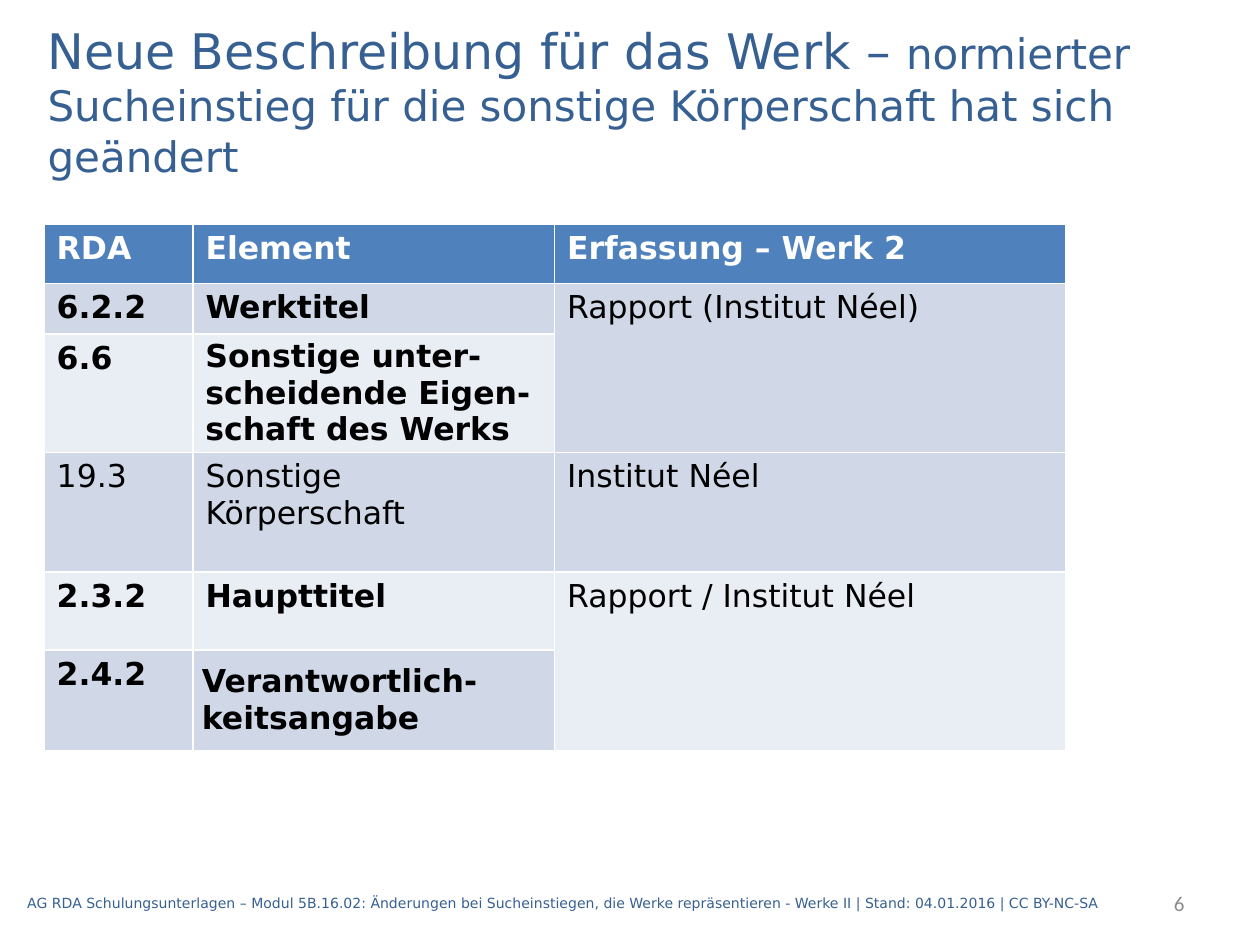
from pptx import Presentation
from pptx.dml.color import RGBColor
from pptx.enum.text import MSO_ANCHOR as Anchor, PP_ALIGN as Align
from pptx.util import Cm, Pt

SANS = "DejaVu Sans"
NAVY, GREY, BLUE = "376092", "8C8C8C", "4F81BD"
WHITE, BLACK = "FFFFFF", "000000"
BANDS = ["E9EDF4", "D0D8E8"]
COLS = [3, 7.29, 10.31]
ROWS = [1.19, 1.02, 2.39, 2.41, 1.57, 2.03]
CELLS = [
    ["RDA", "Element", "Erfassung – Werk 2"],
    ["6.2.2", "Werktitel", "Rapport (Institut Néel)"],
    ["6.6", "Sonstige unter-\vscheidende Eigen-schaft des Werks", ""],
    ["19.3", "Sonstige Körperschaft", "Institut Néel"],
    ["2.3.2", "Haupttitel", "Rapport / Institut Néel"],
    ["2.4.2", "Verantwortlich-keitsangabe", ""],
]
PLAIN = 3
MERGED = [1, 4]
TIGHT = {2: 0.25, 5: 0.18}


def color(code):
    """Turn a hex string into a colour."""
    return RGBColor.from_string(code)


def style(run, size, code, bold=False, name=SANS):
    """Set the font of one run."""
    font = run.font
    font.name, font.size, font.bold = name, Pt(size), bold
    font.color.rgb = color(code)


def add_text(slide, box, parts, code, name=SANS, align=Align.LEFT):
    """Place a text box holding one paragraph of (text, size) parts."""
    frame = slide.shapes.add_textbox(*map(Cm, box)).text_frame
    frame.word_wrap = True
    frame.vertical_anchor = Anchor.MIDDLE
    para = frame.paragraphs[0]
    para.alignment = align
    for text, size in parts:
        run = para.add_run()
        run.text = text
        style(run, size, code, name=name)


def add_title(slide, box):
    """Place the title, whose second part is smaller."""
    add_text(slide, box, [
        ("Neue Beschreibung für das Werk – ", 28),
        ("normierter Sucheinstieg für die sonstige Körperschaft hat sich geändert", 24),
    ], NAVY)


def fill_cell(cell, text, row, col):
    """Write and colour one table cell."""
    head = row == 0
    cell.fill.solid()
    cell.fill.fore_color.rgb = color(BLUE if head else BANDS[row % 2])
    para = cell.text_frame.paragraphs[0]
    para.text = text
    bold = head or (col < 2 and row != PLAIN)
    for run in para.runs:
        style(run, 18, WHITE if head else BLACK, bold)
    if col == 1 and row in TIGHT:
        cell.vertical_anchor = Anchor.MIDDLE
        cell.margin_top = cell.margin_bottom = 0
        cell.margin_left = cell.margin_right = Cm(TIGHT[row])
        if row == 5:
            para.space_after = Pt(6)


def add_grid(slide, left, top):
    """Place the table of RDA elements."""
    box = map(Cm, (left, top, sum(COLS), sum(ROWS)))
    table = slide.shapes.add_table(len(ROWS), len(COLS), *box).table
    for col, width in zip(table.columns, COLS):
        col.width = Cm(width)
    for row, height in zip(table.rows, ROWS):
        row.height = Cm(height)
    for r, line in enumerate(CELLS):
        for c, text in enumerate(line):
            fill_cell(table.cell(r, c), text, r, c)
    for r in MERGED:
        table.cell(r, 2).merge(table.cell(r + 1, 2))


def add_footer(slide, top, height):
    """Place the source line and the page number."""
    note = ("AG RDA Schulungsunterlagen – Modul 5B.16.02: Änderungen bei "
            "Sucheinstiegen, die Werke repräsentieren - Werke II | "
            "Stand: 04.01.2016 | CC BY-NC-SA")
    add_text(slide, (0.3, top, 23.01, height), [(note, 8)], NAVY)
    add_text(slide, (20.09, top, 4.04, height), [("6", 12)], GREY,
             "Calibri", Align.RIGHT)


def main():
    """Build and save the slide."""
    deck = Presentation()
    deck.slide_width, deck.slide_height = Cm(25.4), Cm(19.05)
    slide = deck.slides.add_slide(deck.slide_layouts[6])
    add_title(slide, (0.71, 0.53, 23.8, 3))
    add_footer(slide, 17.7, 1.02)
    add_grid(slide, 0.89, 4.52)
    deck.save("out.pptx")


if __name__ == "__main__":
    main()
